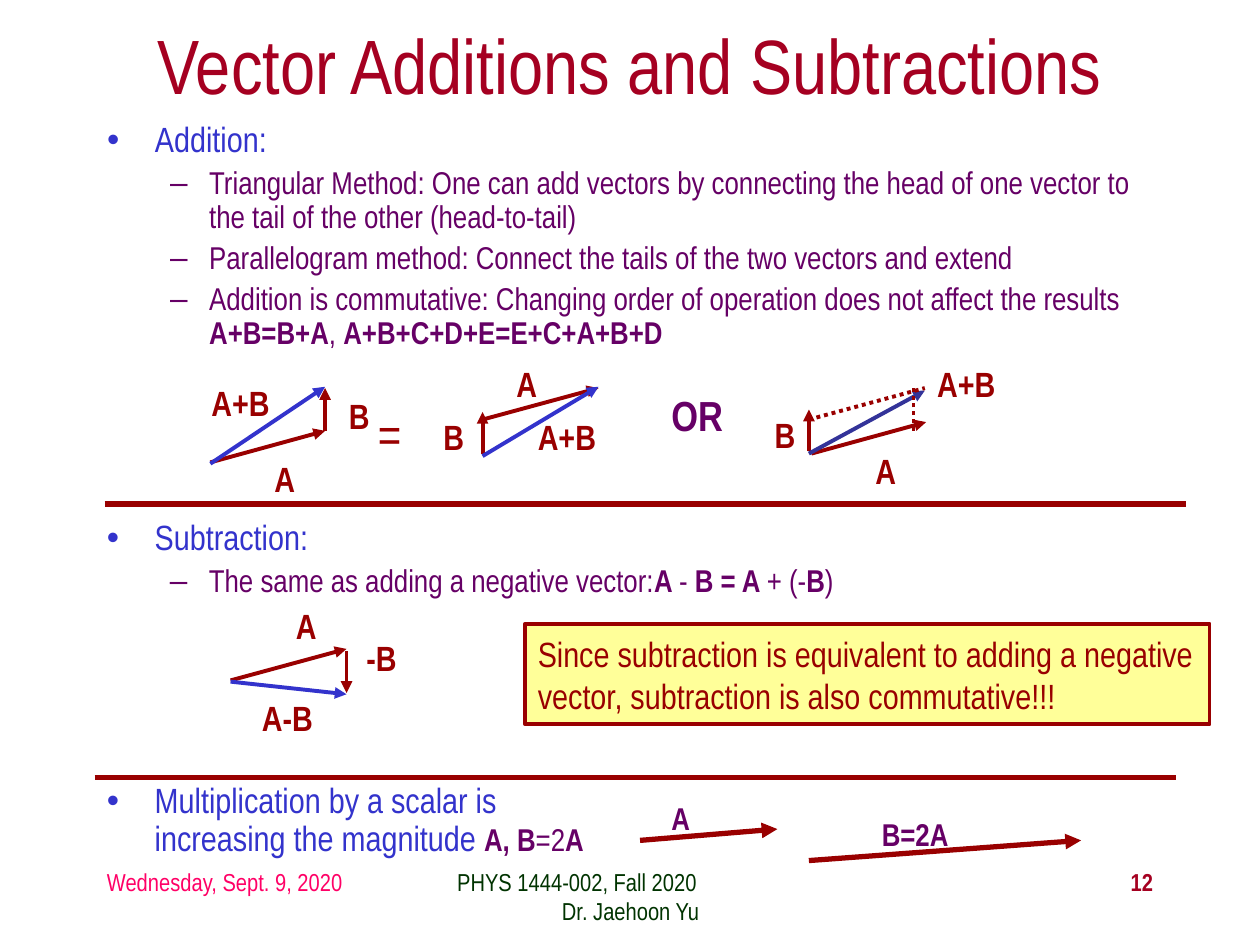
from lxml import etree
from pptx import Presentation
from pptx.dml.color import RGBColor
from pptx.enum.dml import MSO_LINE
from pptx.enum.shapes import MSO_CONNECTOR, MSO_SHAPE
from pptx.enum.text import MSO_ANCHOR, MSO_AUTO_SIZE as FIT, PP_ALIGN as ALIGN
from pptx.oxml.ns import qn
from pptx.util import Inches, Pt

FONT = "Arial Narrow"
COLORS = {
    "title": "A50021", "topic": "3333CC", "detail": "660066", "vector": "990000",
    "diagonal": "333399", "note": "FFFF99", "date": "FF0066", "course": "003300",
}
BULLETS = [("•", 0.38, -0.38), ("–", 0.81, -0.31)]


def rgb(name):
    return RGBColor.from_string(COLORS[name])


def add_span(para, text, size=20, color="vector", bold=False):
    span = para.add_run()
    span.text = text
    span.font.name = FONT
    span.font.size = Pt(size)
    span.font.bold = bold
    span.font.color.rgb = rgb(color)


def write(frame, text, align=ALIGN.LEFT, wrap=True, fit=FIT.NONE, **style):
    frame.word_wrap = wrap
    frame.auto_size = fit
    para = frame.paragraphs[0]
    para.alignment = align
    add_span(para, text, **style)


def place(shape, box):
    shape.left, shape.top, shape.width, shape.height = map(Inches, box)


def text_box(page, box):
    return page.shapes.add_textbox(*map(Inches, box)).text_frame


def label(page, text, box, size=20, color="vector", bold=True):
    write(text_box(page, box), text, wrap=False, size=size, color=color, bold=bold)


def add_line(page, start, end, color="vector", width=2.25, dotted=False, arrow=True):
    line = page.shapes.add_connector(MSO_CONNECTOR.STRAIGHT, *map(Inches, (*start, *end)))
    line.line.color.rgb = rgb(color)
    line.line.width = Pt(width)
    if dotted:
        line.line.dash_style = MSO_LINE.ROUND_DOT
    if arrow:
        etree.SubElement(line.line._get_or_add_ln(), qn("a:tailEnd"), type="triangle")
    etree.SubElement(line._element.spPr, qn("a:effectLst"))


def bullet_list(frame, items):
    """Fill a frame with (level, spans); a span is (text, format)."""
    frame.word_wrap = True
    frame.auto_size = FIT.NONE
    for index, (level, spans) in enumerate(items):
        para = frame.add_paragraph() if index else frame.paragraphs[0]
        para.level = level
        mark, margin, indent = BULLETS[level]
        props = para._p.get_or_add_pPr()
        props.set("marL", str(Inches(margin)))
        props.set("indent", str(Inches(indent)))
        etree.SubElement(props, qn("a:buFont"), typeface="Arial")
        etree.SubElement(props, qn("a:buChar"), char=mark)
        para.line_spacing = 0.9
        para.space_before = Pt(4 if index else 0)
        for text, style in spans:
            add_span(para, text, **style)


def vector_figure(page, origin, arrows, labels):
    """Draw arrows (start, end, format) and labels (text, box) from an origin."""
    left, top = origin
    for (x1, y1), (x2, y2), style in arrows:
        add_line(page, (left + x1, top + y1), (left + x2, top + y2), **style)
    for text, (x, y, width, height), style in labels:
        label(page, text, (left + x, top + y, width, height), **style)


TOPIC = {"size": 20, "color": "topic"}
DETAIL = {"size": 18, "color": "detail"}
STRONG = {**DETAIL, "bold": True}
RESULT = {"color": "topic"}
DOTTED = {"dotted": True, "arrow": False}
SCALED = {"width": 3}


def heading(page, box):
    title = page.shapes.title
    place(title, box)
    title.text_frame.vertical_anchor = MSO_ANCHOR.MIDDLE
    write(title.text_frame, "Vector Additions and Subtractions", align=ALIGN.CENTER,
          size=44, color="title")


def addition_text(page, box):
    body = page.placeholders[1]
    place(body, box)
    bullet_list(body.text_frame, [
        (0, [("Addition:", TOPIC)]),
        (1, [("Triangular Method: One can add vectors by connecting the head of one "
              "vector to the tail of the other (head-to-tail)", DETAIL)]),
        (1, [("Parallelogram method: Connect the tails of the two vectors and extend", DETAIL)]),
        (1, [("Addition is commutative: Changing order of operation does not affect "
              "the results ", DETAIL),
             ("A+B=B+A", STRONG), (", ", DETAIL), ("A+B+C+D+E=E+C+A+B+D", STRONG)]),
    ])


def addition_figures(page, left, top):
    vector_figure(page, (left, top), [
        ((0, 0), (0.91, -0.25), {}),
        ((0.91, -0.25), (0.91, -0.59), {}),
        ((0, 0.01), (0.91, -0.6), RESULT),
    ], [
        ("A", (0.41, -0.09, 0.37, 0.43), {}),
        ("B", (1, -0.59, 0.37, 0.43), {}),
        ("A+B", (-0.09, -0.69, 0.66, 0.43), {}),
        ("=", (1.23, -0.52, 0.39, 0.57), {"size": 28, "bold": False}),
    ])
    vector_figure(page, (left + 2.16, top - 0.07), [
        ((0, -0.27), (0.92, -0.52), {}),
        ((0, 0), (0, -0.33), {}),
        ((0, 0.02), (0.92, -0.53), RESULT),
    ], [
        ("A", (0.17, -0.77, 0.37, 0.43), {}),
        ("B", (-0.41, -0.35, 0.37, 0.43), {}),
        ("A+B", (0.34, -0.35, 0.66, 0.43), {}),
        ("OR", (1.4, -0.56, 0.61, 0.5), {"size": 24, "color": "detail"}),
    ])
    vector_figure(page, (left + 4.75, top - 0.07), [
        ((0.02, 0), (0.93, -0.25), {}),
        ((0, -0.02), (0, -0.35), {}),
        ((0, 0), (0.92, -0.5), {"color": "diagonal"}),
        ((0.83, -0.18), (0.83, -0.52), DOTTED),
        ((0, -0.27), (0.92, -0.52), DOTTED),
    ], [
        ("A", (0.43, -0.08, 0.37, 0.43), {}),
        ("B", (-0.37, -0.37, 0.37, 0.43), {}),
        ("A+B", (0.92, -0.77, 0.66, 0.43), {}),
    ])


def divider(page, left, top, width=8.58):
    add_line(page, (left, top), (left + width, top), width=3, arrow=False)


def subtraction(page, left, top):
    bullet_list(text_box(page, (left, top, 8.5, 0.83)), [
        (0, [("Subtraction:", TOPIC)]),
        (1, [("The same as adding a negative vector:", DETAIL), ("A ", STRONG),
             ("- ", DETAIL), ("B = A ", STRONG), ("+ (-", DETAIL), ("B", STRONG),
             (")", DETAIL)]),
    ])
    vector_figure(page, (left + 1.08, top + 1.32), [
        ((0, 0), (0.92, -0.25), {}),
        ((0.92, -0.23), (0.92, 0.1), {}),
        ((0, 0.01), (0.92, 0.11), RESULT),
    ], [
        ("A", (0.42, -0.65, 0.37, 0.43), {}),
        ("-B", (0.98, -0.4, 0.44, 0.43), {}),
        ("A-B", (0.15, 0.08, 0.61, 0.43), {}),
    ])
    note = page.shapes.add_shape(
        MSO_SHAPE.RECTANGLE, *map(Inches, (left + 3.42, top + 0.87, 5.43, 0.8)))
    note.shadow.inherit = False
    note.fill.solid()
    note.fill.fore_color.rgb = rgb("note")
    note.line.color.rgb = rgb("vector")
    note.line.width = Pt(2.25)
    write(note.text_frame, "Since subtraction is equivalent to adding a negative vector, "
          "subtraction is also commutative!!!", fit=FIT.SHAPE_TO_FIT_TEXT)


def multiplication(page, left, top):
    bullet_list(text_box(page, (left, top, 4, 0.67)), [
        (0, [("Multiplication by a scalar is increasing the magnitude ", TOPIC),
             ("A, B", STRONG), ("=2", DETAIL), ("A", STRONG)]),
    ])
    vector_figure(page, (left + 4.33, top + 0.5), [
        ((0, 0), (1.09, -0.09), SCALED),
        ((1.34, 0.16), (3.5, 0), SCALED),
    ], [
        ("A", (0.15, -0.38, 0.35, 0.4), STRONG),
        ("B=2A", (1.82, -0.25, 0.73, 0.4), STRONG),
    ])


def footer(page, left, top):
    write(text_box(page, (left, top, 2.08, 0.5)), "Wednesday, Sept. 9, 2020",
          size=14, color="date")
    course = text_box(page, (left + 2.67, top, 3.17, 0.5))
    write(course, "PHYS 1444-002, Fall 2020", size=14, color="course")
    course.paragraphs[0]._p.get_or_add_pPr().set("marL", str(Inches(0.11)))
    teacher = course.add_paragraph()
    teacher.alignment = ALIGN.CENTER
    add_span(teacher, "Dr. Jaehoon Yu", size=14, color="course")
    write(text_box(page, (left + 6.42, top, 2.08, 0.5)), "12", align=ALIGN.RIGHT,
          size=14, color="title", bold=True)


def main():
    deck = Presentation()
    deck.slide_width, deck.slide_height = Inches(10), Inches(7.5)
    page = deck.slides.add_slide(deck.slide_layouts[1])
    heading(page, (0.75, 0.17, 8.5, 0.67))
    addition_text(page, (0.75, 0.92, 8.5, 1.83))
    addition_figures(page, 1.67, 3.67)
    divider(page, 0.83, 4)
    subtraction(page, 0.75, 4.08)
    divider(page, 0.75, 6.17)
    multiplication(page, 0.75, 6.17)
    footer(page, 0.75, 6.83)
    deck.save("out.pptx")


if __name__ == "__main__":
    main()
